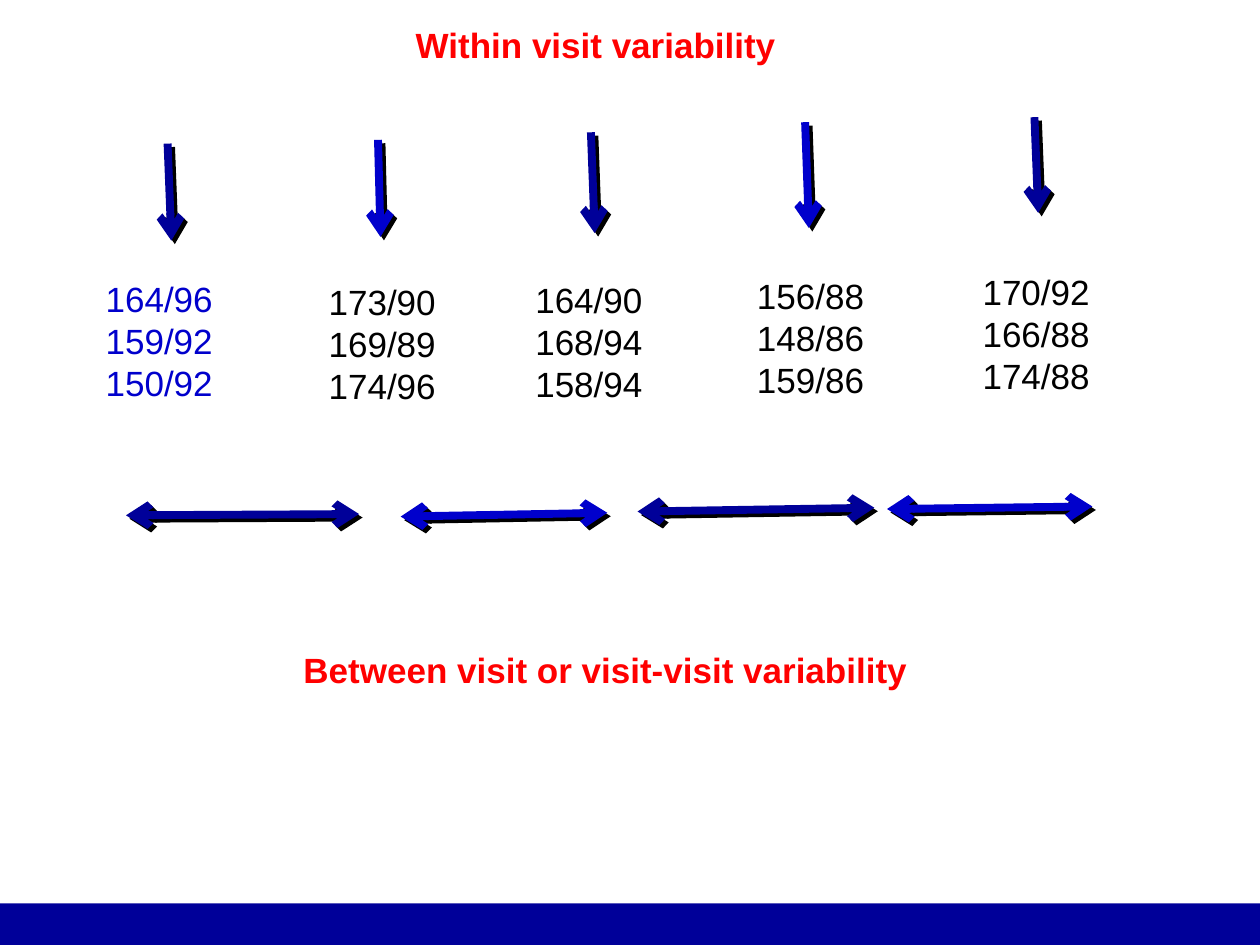
from itertools import cycle

from lxml.etree import SubElement
from pptx import Presentation
from pptx.dml.color import RGBColor
from pptx.enum.shapes import MSO_CONNECTOR, MSO_SHAPE
from pptx.enum.text import MSO_AUTO_SIZE
from pptx.oxml.ns import qn
from pptx.util import Inches, Pt

NAVY = RGBColor(0x00, 0x00, 0x99)
BLUE = RGBColor(0x00, 0x00, 0xCC)
RED = RGBColor(0xFF, 0x00, 0x00)
BLACK = RGBColor(0x00, 0x00, 0x00)

SLIDE_WIDTH, SLIDE_HEIGHT = Inches(10), Inches(7.5)
COLUMNS, ROWS = 100, 75
FONT = "Arial"
READINGS_HEIGHT, HEADING_HEIGHT = 11.1, 4.4

# Readings, their left, top and width, and their colour
VISITS = [
    (["164/96", "159/92", "150/92"], (7.4, 21.5, 10.6), BLUE),
    (["173/90", "169/89", "174/96"], (25.1, 21.8, 11.3), BLACK),
    (["164/90", "168/94", "158/94"], (41.5, 21.6, 13.8), BLACK),
    (["156/88", "148/86", "159/86"], (59.1, 21.3, 15), BLACK),
    (["170/92", "166/88", "174/88"], (77, 21, 16.4), BLACK),
]
# Start and end of each arrow, in columns and rows
WITHIN_VISIT = [
    ((13.3, 11.4), (13.6, 19.1)),
    ((30, 11.1), (30.2, 18.8)),
    ((46.9, 10.5), (47.2, 18.5)),
    ((63.9, 9.7), (64.2, 18.1)),
    ((82.1, 9.3), (82.4, 16.9)),
]
BETWEEN_VISITS = [
    ((10, 40.9), (28.5, 40.8)),
    ((31.8, 41), (48.2, 40.7)),
    ((50.6, 40.6), (69.4, 40.3)),
    ((70.4, 40.4), (86.7, 40.2)),
]


def across(columns):
    return round(SLIDE_WIDTH * columns / COLUMNS)


def down(rows):
    return round(SLIDE_HEIGHT * rows / ROWS)


def add_text(slide, lines, left, top, width, height, *, color, bold=False, wrap=True):
    box = slide.shapes.add_textbox(across(left), down(top), across(width), down(height))
    frame = box.text_frame
    frame.text = "\n".join(lines)
    frame.word_wrap = wrap
    frame.auto_size = MSO_AUTO_SIZE.SHAPE_TO_FIT_TEXT
    for paragraph in frame.paragraphs:
        font = paragraph.runs[0].font
        font.name, font.size, font.bold = FONT, Pt(20), bold
        font.color.rgb = color


def add_hard_shadow(connector):
    """Give the connector a solid black shadow to its lower right."""
    effects = SubElement(connector._element.spPr, qn("a:effectLst"))
    shadow = SubElement(effects, qn("a:outerShdw"), dist=str(Pt(2.8)),
                        dir="2700000", algn="ctr", rotWithShape="0")
    SubElement(shadow, qn("a:srgbClr"), val=str(BLACK))


def add_arrow(slide, start, end, color, both_ends=False):
    arrow = slide.shapes.add_connector(
        MSO_CONNECTOR.STRAIGHT,
        across(start[0]), down(start[1]), across(end[0]), down(end[1]))
    arrow.line.color.rgb = color
    arrow.line.width = Pt(4.5)
    outline = arrow.line._get_or_add_ln()
    for tag in ["a:headEnd", "a:tailEnd"] if both_ends else ["a:tailEnd"]:
        SubElement(outline, qn(tag), type="arrow")
    add_hard_shadow(arrow)


def add_footer_band(slide):
    top = down(71.7)
    band = slide.shapes.add_shape(
        MSO_SHAPE.RECTANGLE, 0, top, SLIDE_WIDTH, SLIDE_HEIGHT - top)
    band.shadow.inherit = False
    band.fill.solid()
    band.fill.fore_color.rgb = NAVY
    band.line.fill.background()


def main():
    presentation = Presentation()
    presentation.slide_width, presentation.slide_height = SLIDE_WIDTH, SLIDE_HEIGHT
    slide = presentation.slides.add_slide(presentation.slide_layouts[6])

    add_footer_band(slide)
    for index, (readings, place, color) in enumerate(VISITS):
        add_text(slide, readings, *place, READINGS_HEIGHT, color=color, wrap=index > 0)
    for arrows, both_ends in [(BETWEEN_VISITS, True), (WITHIN_VISIT, False)]:
        for (start, end), color in zip(arrows, cycle([NAVY, BLUE])):
            add_arrow(slide, start, end, color, both_ends)
    add_text(slide, ["Within visit variability"], 32, 1.4, 46.2, HEADING_HEIGHT,
             color=RED, bold=True)
    add_text(slide, ["Between visit or visit-visit variability"], 23.1, 51, 57.1,
             HEADING_HEIGHT, color=RED, bold=True)

    presentation.save("out.pptx")


if __name__ == "__main__":
    main()
